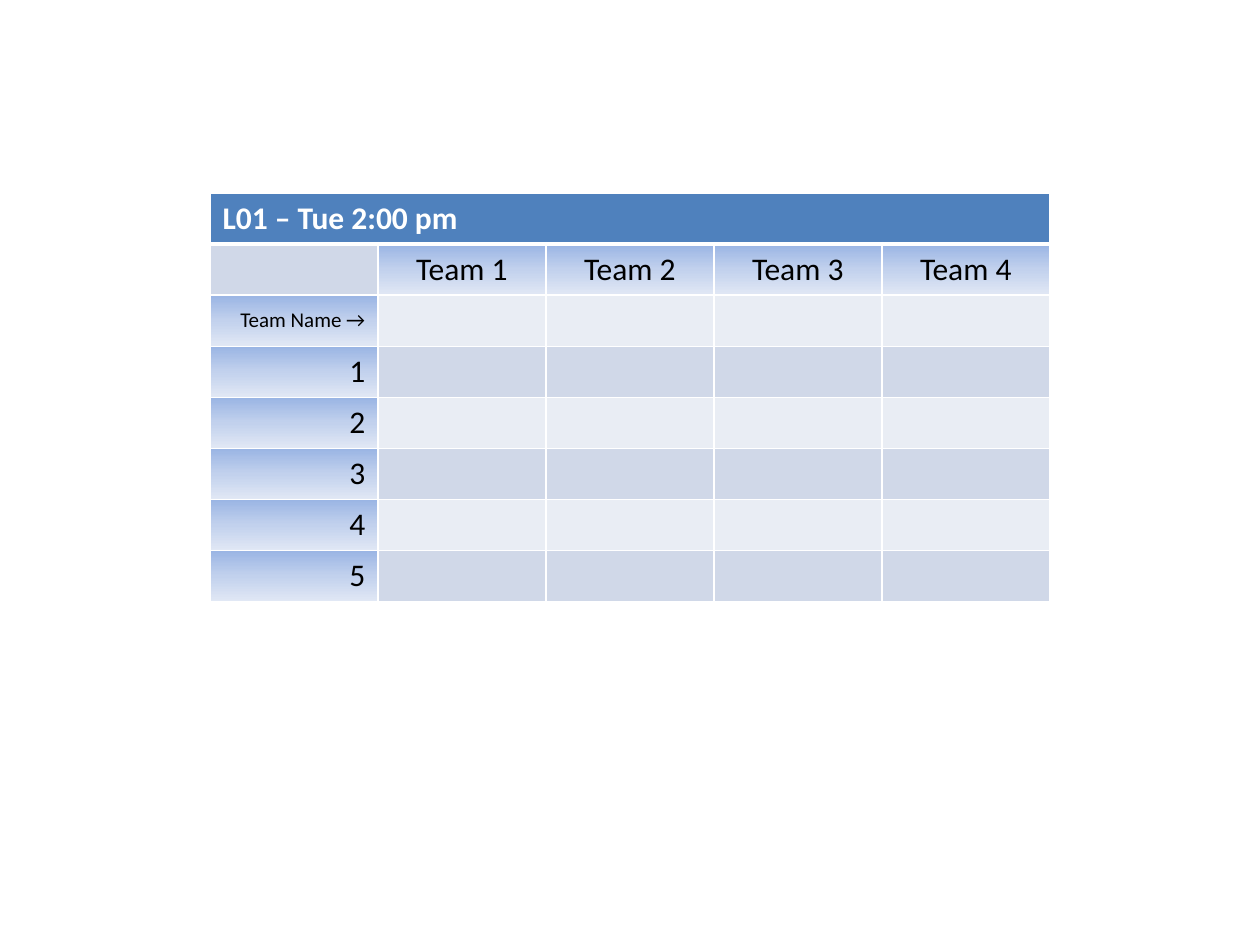
import lxml.etree
import pptx
import pptx.dml.color
import pptx.enum.text
import pptx.oxml.ns
import pptx.util

PX = pptx.util.Inches(1) // 126
COLUMNS, ROWS = 5, 8
COLUMN_WIDTH, ROW_HEIGHT = 168, 51
LABEL_GRADIENT = [(0, "9AB5E4"), (50, "C2D1ED"), (100, "E1E8F5")]
BANDS = ["E9EDF4", "D0D8E8"]
ALIGN = pptx.enum.text.PP_ALIGN


def rgb(value):
    return pptx.dml.color.RGBColor.from_string(value)


def add_xml(parent, tag, **attributes):
    return lxml.etree.SubElement(parent, pptx.oxml.ns.qn(tag), attributes)


deck = pptx.Presentation()
deck.slide_width, deck.slide_height = 1260 * PX, 945 * PX
page = deck.slides.add_slide(deck.slide_layouts[6])

# Table grid
table = page.shapes.add_table(
    ROWS, COLUMNS, 210 * PX, 193 * PX,
    COLUMNS * COLUMN_WIDTH * PX, ROWS * ROW_HEIGHT * PX).table
for column in table.columns:
    column.width = COLUMN_WIDTH * PX
for row in table.rows:
    row.height = ROW_HEIGHT * PX
table.cell(0, 0).merge(table.cell(0, COLUMNS - 1))

# Wording: session heading, team headings, row labels
labels = {(0, 0): "L01 – Tue 2:00 pm", (2, 0): "Team Name →"}
for number in range(1, COLUMNS):
    labels[1, number] = f"Team {number}"
for number in range(1, 6):
    labels[number + 2, 0] = str(number)

for row in range(ROWS):
    for column in range(COLUMNS):
        cell = table.cell(row, column)
        properties = cell._tc.get_or_add_tcPr()

        # White borders, thicker below the heading
        for side in ("L", "R", "T", "B"):
            heavy = (row, side) in ((0, "B"), (1, "T"))
            line = add_xml(properties, f"a:ln{side}",
                           w=str(pptx.util.Pt(3 if heavy else 1)))
            add_xml(add_xml(line, "a:solidFill"), "a:srgbClr", val="FFFFFF")

        # Heading fill, label gradient or banded body
        if row and (row, column) in labels:
            gradient = add_xml(properties, "a:gradFill", rotWithShape="1")
            stops = add_xml(gradient, "a:gsLst")
            for percent, color in LABEL_GRADIENT:
                stop = add_xml(stops, "a:gs", pos=str(percent * 1000))
                add_xml(stop, "a:srgbClr", val=color)
            add_xml(gradient, "a:lin", ang="5400000", scaled="0")
        else:
            cell.fill.solid()
            cell.fill.fore_color.rgb = rgb(BANDS[row % 2] if row else "4F81BD")

        # Text
        if (row, column) in labels:
            cell.text_frame.text = labels[row, column]
            para = cell.text_frame.paragraphs[0]
            if row:
                para.alignment = ALIGN.RIGHT if column == 0 else ALIGN.CENTER
            font = para.runs[0].font
            font.name = "Calibri"
            font.size = pptx.util.Pt(12 if row == 2 else 18)
            font.bold = row == 0
            font.color.rgb = rgb("000000" if row else "FFFFFF")

table.cell(2, 0).vertical_anchor = pptx.enum.text.MSO_ANCHOR.MIDDLE

deck.save("out.pptx")
